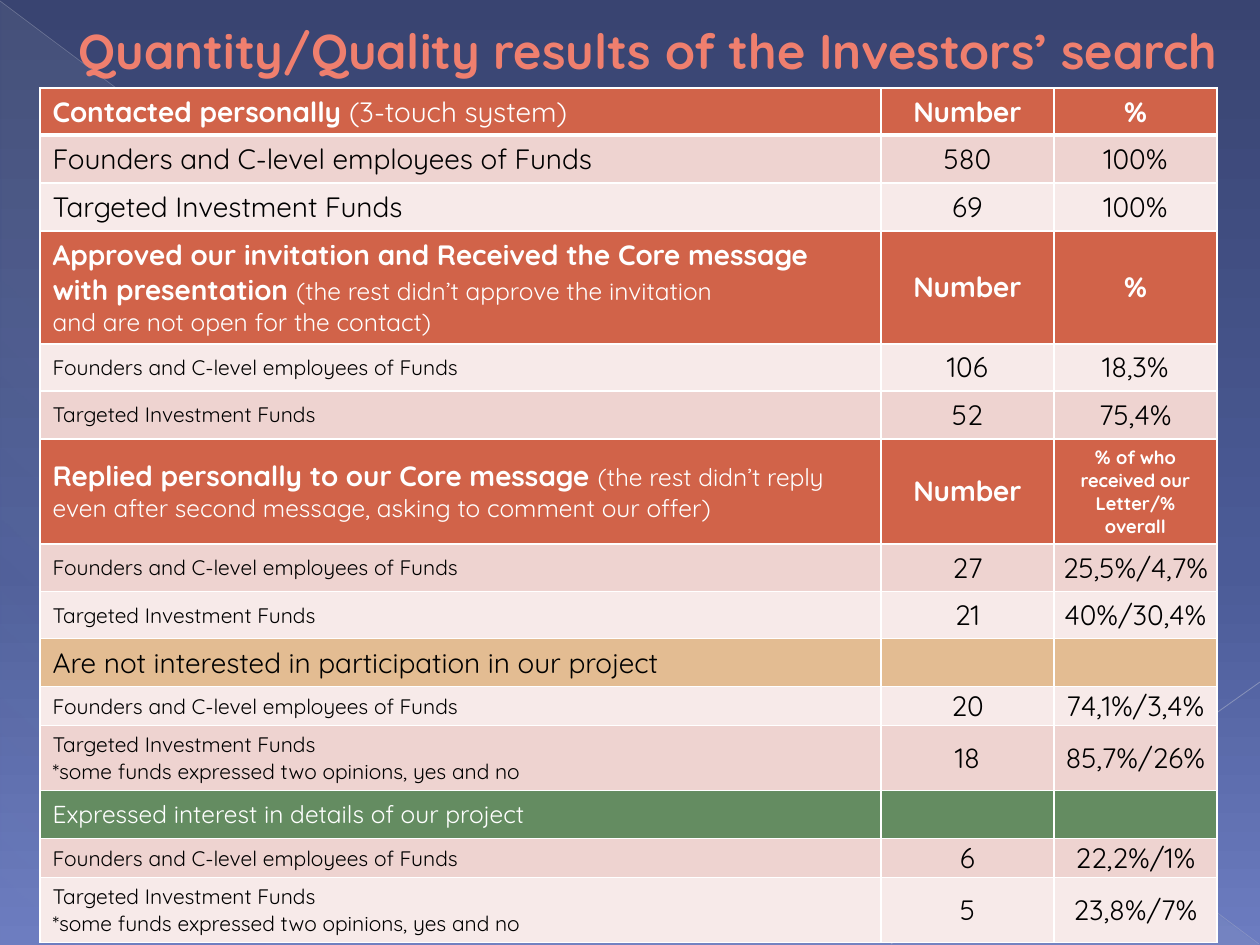
from lxml.etree import SubElement
from pptx import Presentation
from pptx.dml.color import RGBColor
from pptx.enum.shapes import MSO_CONNECTOR as Connector, MSO_SHAPE as Shape
from pptx.enum.text import MSO_ANCHOR as Anchor, PP_ALIGN as Align
from pptx.oxml.ns import qn
from pptx.util import Pt

EMU_PER_PX = 914400 / 126
FONT = "Quicksand"
COLORS = {
    "title": "EF7F6E", "title_edge": "914533", "white": "FFFFFF", "black": "000000",
    "header": "D16349", "pink": "EED3D0", "pale": "F7EAE9",
    "declined": "E3BC92", "interested": "648C61", "veil": "C5D1D7",
    "diagonal": "BABECD", "corner": "C2C5D2",
    "sky_top": "394471", "sky_mid": "4B5B97", "sky_low": "6C7CC0",
}

# Content: a paragraph is a list of (text, size, bold) spans
TITLE = "Quantity/Quality results of the Investors’ search"
FOUNDERS = "Founders and C-level employees of Funds"
FUNDS = "Targeted Investment Funds"
OPINIONS = "*some funds expressed two opinions, yes and no"


def plain(size, *lines):
    return [[(line, size, False)] for line in lines]


def bold(text):
    return [[(text, 16, True)]]


NUMBER, PERCENT = bold("Number"), bold("%")
OVERALL = [[("% ", 11, True), ("of who received our Letter/% overall", 10.5, True)]]
APPROVED = [
    [("Approved our invitation and Received the Core message with presentation ", 16, True),
     ("(the rest didn’t approve the invitation", 14, False)],
    [("and are not open for the contact)", 14, False)],
]
REPLIED = [[
    ("Replied personally to our Core message ", 16, True),
    ("(the rest didn’t reply even after second message, asking to comment our offer)", 14, False),
]]
CONTACTED = [[("Contacted personally ", 16, True), ("(3-touch system)", 16, False)]]

# Row kind, height, label, number, share
ROWS = [
    ("header", 47, CONTACTED, NUMBER, PERCENT),
    ("body", 48, plain(16, FOUNDERS), plain(16, "580"), plain(16, "100%")),
    ("body", 48, plain(16, FUNDS), plain(16, "69"), plain(16, "100%")),
    ("header", 113, APPROVED, NUMBER, PERCENT),
    ("body", 47, plain(12, FOUNDERS), plain(16, "106"), plain(16, "18,3%")),
    ("body", 48, plain(12, FUNDS), plain(16, "52"), plain(16, "75,4%")),
    ("header", 105, REPLIED, NUMBER, OVERALL),
    ("body", 48, plain(12, FOUNDERS), plain(16, "27"), plain(16, "25,5%/4,7%")),
    ("body", 47, plain(12, FUNDS), plain(16, "21"), plain(16, "40%/30,4%")),
    ("declined", 48, plain(16, "Are not interested in participation in our project"), [], []),
    ("body", 39, plain(12, FOUNDERS), plain(16, "20"), plain(16, "74,1%/3,4%")),
    ("body", 65, plain(12, FUNDS, OPINIONS), plain(16, "18"), plain(16, "85,7%/26%")),
    ("interested", 48, plain(14, "Expressed interest in details of our project"), [], []),
    ("body", 39, plain(12, FOUNDERS), plain(16, "6"), plain(16, "22,2%/1%")),
    ("body", 65, plain(12, FUNDS, OPINIONS), plain(16, "5"), plain(16, "23,8%/7%")),
]
COLUMNS = [841, 173, 163]
TABLE_LEFT, TABLE_TOP = 40, 88

# Background lines: start, end, colour, width in points, opacity in percent
LINES = [
    ((0, 1), (1259, 944), "diagonal", 0.39, 35),
    ((1260, 682), (891, 944), "corner", 0.47, 45),
]


def px(value):
    return round(value * EMU_PER_PX)


def rgb(name):
    return RGBColor.from_string(COLORS[name])


def add_color(parent, name, opacity=100):
    color = SubElement(parent, qn("a:srgbClr"), val=COLORS[name])
    if opacity < 100:
        SubElement(color, qn("a:alpha"), val=str(opacity * 1000))


def add_outline(parent, tag, name, points):
    line = SubElement(parent, qn(tag), w=str(round(points * 12700)))
    add_color(SubElement(line, qn("a:solidFill")), name)
    return line


def paint_gradient(fill, element, stops, angle):
    """Give a fill its stops: (position, colour, opacity)."""
    fill.gradient()
    gradient = element.find(".//" + qn("a:gradFill"))
    stop_list = gradient.find(qn("a:gsLst"))
    for stop in list(stop_list):
        stop_list.remove(stop)
    for position, name, opacity in stops:
        stop = SubElement(stop_list, qn("a:gs"), pos=str(position * 1000))
        add_color(stop, name, opacity)
    gradient.find(qn("a:lin")).set("ang", str(angle * 60000))


def write(frame, paragraphs, color="black", align=Align.LEFT):
    frame.word_wrap = True
    for index, spans in enumerate(paragraphs):
        para = frame.paragraphs[0] if index == 0 else frame.add_paragraph()
        para.alignment = align
        for text, size, is_bold in spans:
            span = para.add_run()
            span.text = text
            span.font.name = FONT
            span.font.size = Pt(size)
            span.font.bold = is_bold
            span.font.color.rgb = rgb(color)


def set_margins(cell, margin):
    cell.margin_left = cell.margin_right = px(margin)
    cell.margin_top = cell.margin_bottom = px(margin)


def set_borders(cell, top, bottom):
    props = cell._tc.get_or_add_tcPr()
    widths = (("a:lnL", 1), ("a:lnR", 1), ("a:lnT", top), ("a:lnB", bottom))
    for place, (tag, points) in enumerate(widths):
        props.insert(place, add_outline(props, tag, "white", points))


deck = Presentation()
deck.slide_width, deck.slide_height = px(1260), px(945)
page = deck.slides.add_slide(deck.slide_layouts[6])

# Background
paint_gradient(page.background.fill, page.element,
               [(0, "sky_top", 100), (60, "sky_mid", 100), (100, "sky_low", 100)], 90)
veil = page.shapes.add_shape(Shape.RIGHT_TRIANGLE, px(1), px(2), px(1258), px(943))
veil.shadow.inherit = False
veil.line.fill.background()
paint_gradient(veil.fill, veil.element,
               [(0, "veil", 10), (70, "veil", 8), (100, "veil", 1)], 133)
for start, end, name, points, opacity in LINES:
    line = page.shapes.add_connector(Connector.STRAIGHT, *map(px, start + end))
    line.line.width = Pt(points)
    line.line.color.rgb = rgb(name)
    color = line.element.spPr.find(".//" + qn("a:srgbClr"))
    SubElement(color, qn("a:alpha"), val=str(opacity * 1000))
    SubElement(line.element.spPr, qn("a:effectLst"))

# Title
title = page.shapes.add_textbox(0, px(10), px(1260), px(79))
title.text_frame.vertical_anchor = Anchor.MIDDLE
title.text_frame.margin_left = px(79)
write(title.text_frame, [[(TITLE, 27.9, True)]], color="title")
span_props = title.text_frame.paragraphs[0].runs[0].font._element
span_props.insert(0, add_outline(span_props, "a:ln", "title_edge", 0.5))

# Results table
heights = [row[1] for row in ROWS]
table = page.shapes.add_table(len(ROWS), len(COLUMNS), px(TABLE_LEFT), px(TABLE_TOP),
                              px(sum(COLUMNS)), px(sum(heights))).table
table.first_row = table.horz_banding = False
for column, width in zip(table.columns, COLUMNS):
    column.width = px(width)
for index, (kind, height, *contents) in enumerate(ROWS):
    table.rows[index].height = px(height)
    fill = kind if kind != "body" else ("pale", "pink")[index % 2]
    ink = "white" if kind in ("header", "interested") else "black"
    for column, content in enumerate(contents):
        cell = table.cell(index, column)
        cell.vertical_anchor = Anchor.MIDDLE
        cell.fill.solid()
        cell.fill.fore_color.rgb = rgb(fill)
        if column and kind != "header":
            set_margins(cell, 1)
        write(cell.text_frame, content, color=ink,
              align=Align.CENTER if column else Align.LEFT)
        set_borders(cell, top=3 if index == 1 else 1, bottom=3 if index == 0 else 1)

deck.save("out.pptx")
